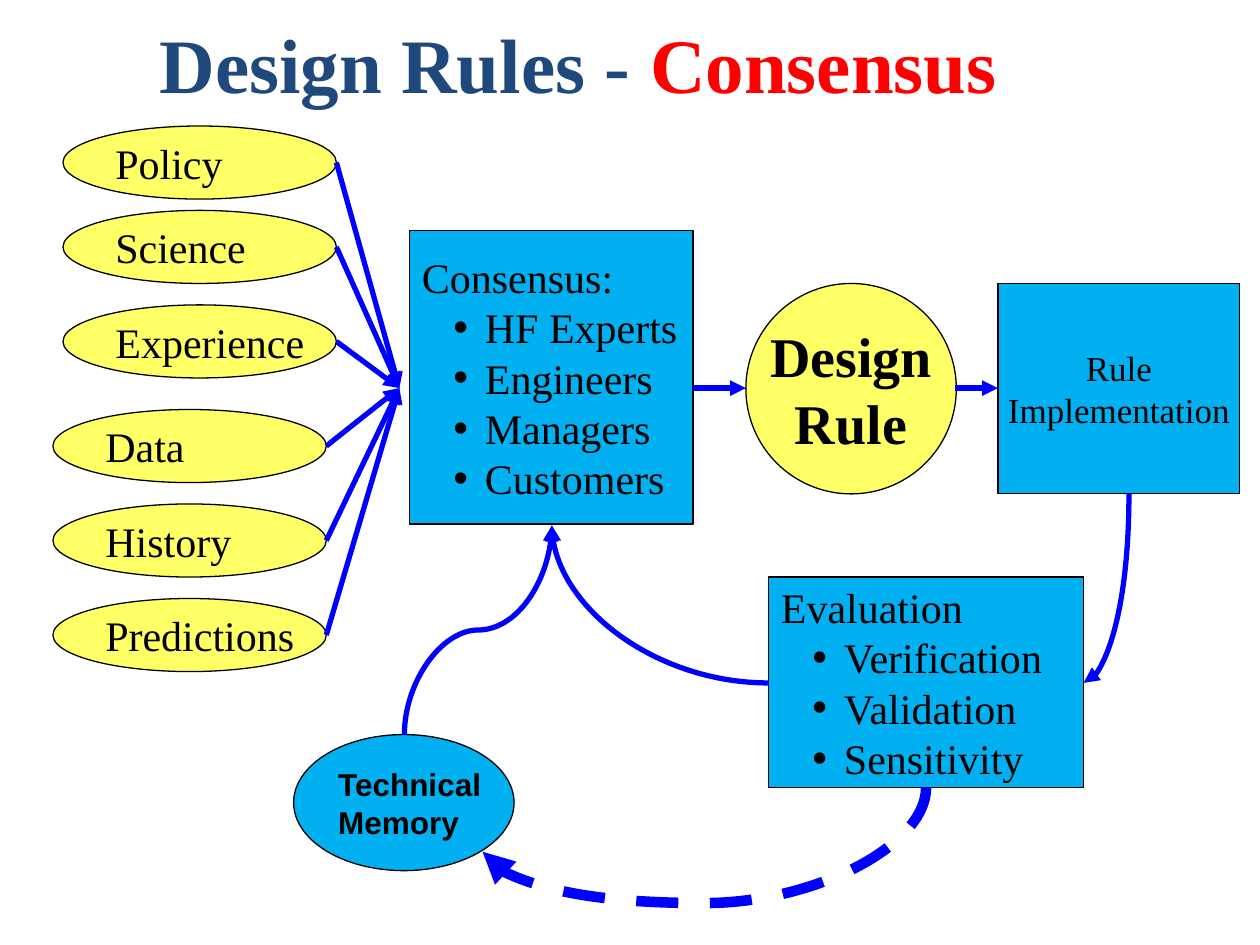
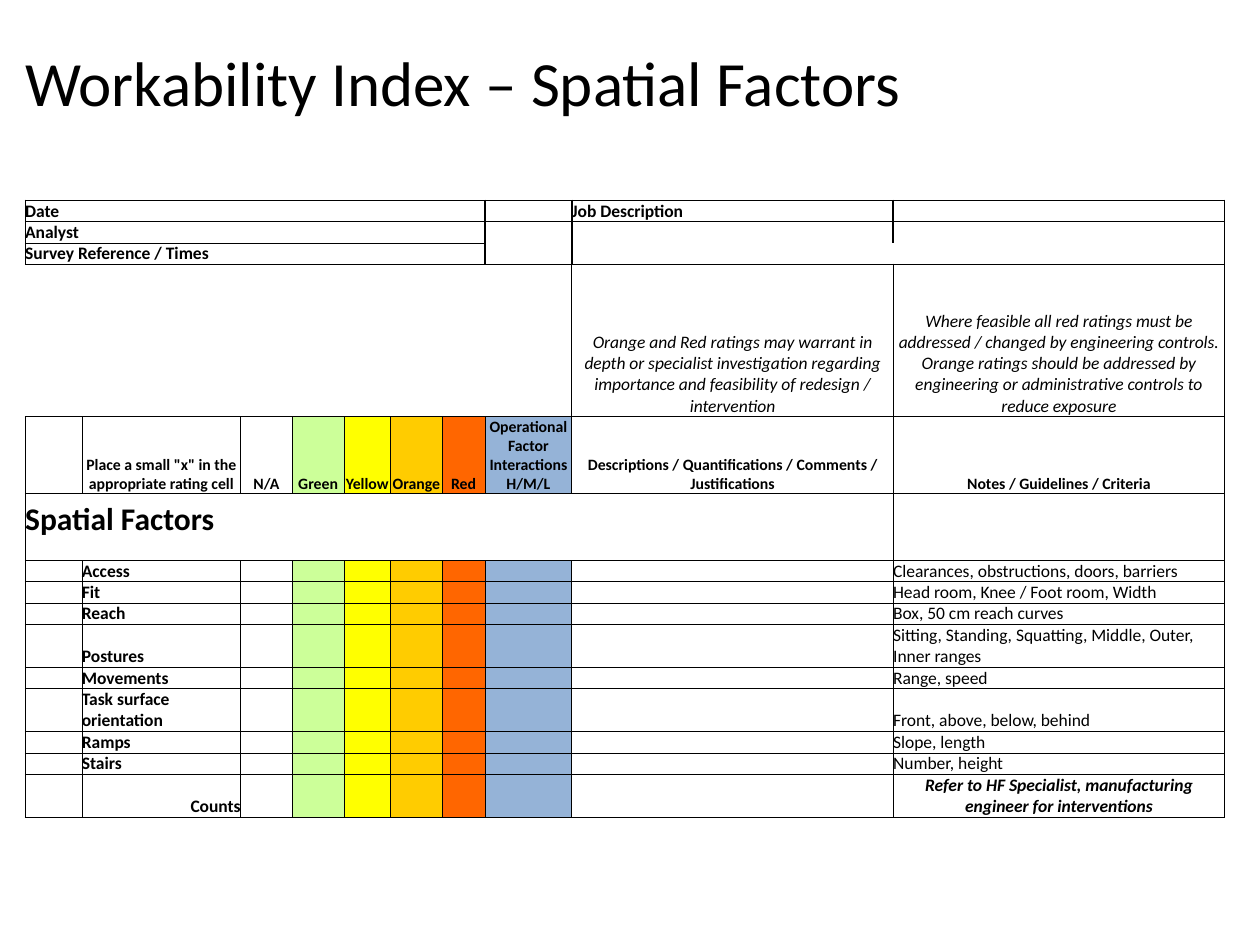
from lxml import etree
from pptx import Presentation
from pptx.dml.color import RGBColor
from pptx.enum.dml import MSO_LINE
from pptx.enum.shapes import MSO_CONNECTOR, MSO_SHAPE
from pptx.enum.text import MSO_ANCHOR, PP_ALIGN
from pptx.oxml.ns import qn
from pptx.util import Inches, Pt

OVAL, RECT = MSO_SHAPE.OVAL, MSO_SHAPE.RECTANGLE
LEFT, CENTER, RIGHT = PP_ALIGN.LEFT, PP_ALIGN.CENTER, PP_ALIGN.RIGHT
MIDDLE, BOTTOM = MSO_ANCHOR.MIDDLE, MSO_ANCHOR.BOTTOM
STRAIGHT, CURVE = MSO_CONNECTOR.STRAIGHT, MSO_CONNECTOR.CURVE
DASH = MSO_LINE.DASH

SERIF, SANS, TABLE_FONT = "Times New Roman", "Arial", "Calibri"
BLACK, NAVY, RED = "000000", "1F497D", "FF0000"
YELLOW, SKY, ARROW_BLUE = "FFFF66", "00B0F0", "0000FF"
NO_TABLE_STYLE = "{2D5ABB26-0587-4C30-8999-92F81FD0307C}"


def color(hex_value):
    return RGBColor.from_string(hex_value)


class SlideBuilder:
    """Holds the deck, the current page and the drawing style."""

    def __init__(self):
        self.deck = Presentation()
        self.deck.slide_width, self.deck.slide_height = Inches(10), Inches(7.5)
        self.page = None

    def new_page(self):
        self.page = self.deck.slides.add_slide(self.deck.slide_layouts[6])

    def add_span(self, para, text, size, font=SERIF, fill=BLACK, bold=False, italic=False):
        span = para.add_run()
        span.text = text
        span.font.size, span.font.name = Pt(size), font
        span.font.bold, span.font.italic = bold, italic
        span.font.color.rgb = color(fill)

    def title(self, left, top, width, height, spans):
        box = self.page.shapes.add_textbox(*map(Inches, (left, top, width, height)))
        frame = box.text_frame
        frame.word_wrap, frame.vertical_anchor = True, MIDDLE
        for text, fill in spans:
            self.add_span(frame.paragraphs[0], text, 44, fill=fill, bold=True)

    def node(self, kind, left, top, width, height, fill, lines, size=24,
             font=SERIF, bold=False, align=LEFT, bullets=()):
        shape = self.page.shapes.add_shape(
            kind, *map(Inches, (left, top, width, height)))
        shape.shadow.inherit = False
        shape.fill.solid()
        shape.fill.fore_color.rgb = color(fill)
        shape.line.color.rgb = color(BLACK)
        shape.line.width = Pt(0.75)
        frame = shape.text_frame
        frame.word_wrap, frame.vertical_anchor = False, MIDDLE
        for index, text in enumerate([*lines, *bullets]):
            para = frame.add_paragraph() if index else frame.paragraphs[0]
            para.alignment = align
            if index >= len(lines):
                self.add_bullet(para)
            self.add_span(para, text, size, font, bold=bold)

    def add_bullet(self, para):
        para.level = 1
        properties = para._p.get_or_add_pPr()
        properties.set("marL", str(Inches(0.5)))
        properties.set("indent", str(-Inches(0.25)))
        etree.SubElement(properties, qn("a:buFont"), typeface=SANS)
        etree.SubElement(properties, qn("a:buChar"), char="•")

    def arrow(self, start, end, kind=STRAIGHT, weight=3):
        link = self.page.shapes.add_connector(kind, *map(Inches, (*start, *end)))
        link.line.color.rgb = color(ARROW_BLUE)
        link.line.width = Pt(weight)
        etree.SubElement(link.line._get_or_add_ln(), qn("a:tailEnd"), type="triangle")
        etree.SubElement(link._element.spPr, qn("a:effectLst"))
        return link

    def curved_arrow(self, start, end, turn, preset, bend=None, weight=3):
        """Draw a curve whose unturned box runs top left to bottom right."""
        width, height = abs(end[0] - start[0]), abs(end[1] - start[1])
        if turn % 180:
            width, height = height, width
        mid_x, mid_y = (start[0] + end[0]) / 2, (start[1] + end[1]) / 2
        link = self.arrow((mid_x - width / 2, mid_y - height / 2),
                          (mid_x + width / 2, mid_y + height / 2), CURVE, weight)
        properties = link._element.spPr
        properties.find(qn("a:xfrm")).set("rot", str(turn * 60000))
        geometry = properties.find(qn("a:prstGeom"))
        geometry.set("prst", preset)
        if bend is not None:
            etree.SubElement(geometry.find(qn("a:avLst")), qn("a:gd"),
                             name="adj1", fmla=f"val {round(bend * 100000)}")
        return link

    def table(self, left, top, columns, rows):
        frame = self.page.shapes.add_table(
            len(rows), len(columns), *map(Inches, (left, top, sum(columns), sum(rows))))
        table = frame.table
        table.first_row = table.horz_banding = False
        table._tbl.tblPr.find(qn("a:tableStyleId")).text = NO_TABLE_STYLE
        for column, width in zip(table.columns, columns):
            column.width = Inches(width)
        for row, height in zip(table.rows, rows):
            row.height = Inches(height)
        return table

    def cell_border(self, cell, sides, weight):
        """Draw the given sides, in the order L, R, T, B."""
        for side in sides:
            line = etree.SubElement(cell._tc.get_or_add_tcPr(), qn(f"a:ln{side}"),
                                    w=str(Pt(weight)))
            fill = etree.SubElement(line, qn("a:solidFill"))
            etree.SubElement(fill, qn("a:srgbClr"), val=BLACK)

    def region(self, table, top, left, bottom, right, weight=0.5, sides="LRTB"):
        """Outline a block of cells, leaving its inside without lines."""
        for row in range(top, bottom + 1):
            for column in range(left, right + 1):
                edges = {"L": column == left, "R": column == right,
                         "T": row == top, "B": row == bottom}
                self.cell_border(table.cell(row, column),
                                 [side for side in sides if edges[side]], weight)

    def cell_style(self, cell, fill=None):
        cell.margin_left = cell.margin_right = cell.margin_top = cell.margin_bottom = 0
        cell.vertical_anchor = BOTTOM
        if fill:
            cell.fill.solid()
            cell.fill.fore_color.rgb = color(fill)
        else:
            cell.fill.background()
        etree.SubElement(cell.text_frame.paragraphs[0]._p, qn("a:endParaRPr"), sz="900")

    def cell_text(self, cell, text, size=10, bold=False, italic=False, align=LEFT, below=0):
        para = cell.text_frame.paragraphs[0]
        para.alignment = align
        cell.margin_bottom = Inches(below)
        self.add_span(para, text, size, TABLE_FONT, bold=bold, italic=italic)


def build_consensus(builder):
    builder.new_page()
    builder.title(1.17, 0.25, 8.5, 0.5, [("Design Rules - ", NAVY), ("Consensus", RED)])

    inputs = [("Policy", 0.5, 1), ("Science", 0.5, 1.67), ("Experience", 0.5, 2.42),
              ("Data", 0.42, 3.25), ("History", 0.42, 4), ("Predictions", 0.42, 4.75)]
    for name, left, top in inputs:
        builder.node(OVAL, left, top, 2.17, 0.58, YELLOW, [name])
        builder.arrow((left + 2.17, top + 0.29), (3.17, 3.08))

    builder.node(RECT, 3.25, 1.83, 2.25, 2.33, SKY, ["Consensus:"],
                 bullets=["HF Experts", "Engineers", "Managers", "Customers"])
    builder.node(OVAL, 5.92, 2.25, 1.67, 1.67, YELLOW, ["Design", "Rule"],
                 size=32, bold=True, align=CENTER)
    builder.node(RECT, 7.92, 2.25, 1.92, 1.67, SKY, ["Rule", "Implementation"],
                 size=20, align=CENTER)
    builder.node(RECT, 6.1, 4.58, 2.5, 1.67, SKY, ["Evaluation"],
                 bullets=["Verification", "Validation", "Sensitivity"])
    builder.node(OVAL, 2.33, 5.83, 1.75, 1.08, SKY, ["Technical", "Memory"],
                 size=18, font=SANS, bold=True)

    builder.arrow((5.5, 3.08), (5.92, 3.08))
    builder.arrow((7.58, 3.08), (7.92, 3.08))
    consensus_foot = (4.38, 4.17)
    builder.curved_arrow((8.96, 3.92), (8.6, 5.42), 90, "curvedConnector2")
    builder.curved_arrow((6.1, 5.42), consensus_foot, 180, "curvedConnector2")
    builder.curved_arrow((3.21, 5.83), consensus_foot, 270, "curvedConnector3", 0.5)
    feedback = builder.curved_arrow((7.35, 6.25), (3.83, 6.76), 90,
                                    "curvedConnector3", 1.8, weight=6)
    feedback.line.dash_style = DASH


RATING_FILLS = {3: "CCFF99", 4: "FFFF00", 5: "FFCC00", 6: "FF6600", 7: "95B3D7"}
HEADINGS = ['Place a small "x" in the appropriate rating cell', "N/A", "Green", "Yellow",
            "Orange", "Red", "Operational Factor Interactions H/M/L",
            "Descriptions / Quantifications / Comments / Justifications",
            "Notes / Guidelines / Criteria"]
ADVICE = [
    "Orange and Red ratings may warrant in depth or specialist investigation regarding "
    "importance and feasibility of redesign / intervention",
    "Where feasible all red ratings must be addressed / changed by engineering controls. "
    "Orange ratings should be addressed by engineering or administrative controls to "
    "reduce exposure"]
FACTORS = [
    ("Access", "Clearances, obstructions, doors, barriers"),
    ("Fit", "Head room, Knee / Foot room, Width"),
    ("Reach", "Box, 50 cm reach curves"),
    ("Postures", "Sitting, Standing, Squatting, Middle, Outer, Inner ranges"),
    ("Movements", "Range, speed"),
    ("Task surface orientation", "Front, above, below, behind"),
    ("Ramps", "Slope, length"),
    ("Stairs", "Number, height"),
    ("Counts", "Refer to HF Specialist, manufacturing engineer for interventions")]
HEADING_ROW, SECTION_ROW, FIRST_FACTOR_ROW = 5, 6, 7


def build_workability(builder):
    builder.new_page()
    columns = [0.45, 1.26, 0.41, 0.41, 0.37, 0.41, 0.34, 0.69, 2.55, 2.63]
    one_line, two_lines = 0.17, 0.34
    rows = [1.23, *[one_line] * 3, 1.21, 0.61, 0.53, *[one_line] * 3, two_lines,
            one_line, two_lines, *[one_line] * 2, two_lines]
    table = builder.table(0.2, 0.36, columns, rows)

    builder.region(table, 0, 0, 0, 9, 1, "B")
    for row in range(1, 4):
        builder.region(table, row, 0, row, 6)
    builder.region(table, 1, 7, 3, 7, 1)
    builder.region(table, 1, 8, 3, 9, 1)
    builder.region(table, 4, 0, 4, 7, sides="RTB")
    builder.region(table, SECTION_ROW, 0, SECTION_ROW, 8)
    single_cells = [(4, 8), (4, 9), (SECTION_ROW, 9)]
    single_cells += [(row, column) for row in (HEADING_ROW, *range(FIRST_FACTOR_ROW, len(rows)))
                     for column in range(len(columns))]
    for row, column in single_cells:
        builder.region(table, row, column, row, column)

    for row in range(len(rows)):
        rated = row == HEADING_ROW or row >= FIRST_FACTOR_ROW
        for column in range(len(columns)):
            builder.cell_style(table.cell(row, column),
                               RATING_FILLS.get(column) if rated else None)
    for row, last in ((0, 9), (3, 1), (SECTION_ROW, 8)):
        table.cell(row, 0).merge(table.cell(row, last))

    builder.cell_text(table.cell(0, 0), "Workability Index – Spatial Factors", 36, below=0.61)
    for row, label in enumerate(["Date", "Analyst", "Survey Reference / Times"], 1):
        builder.cell_text(table.cell(row, 0), label, bold=True)
    builder.cell_text(table.cell(1, 8), "Job Description", bold=True)
    for column, text in enumerate(ADVICE, 8):
        builder.cell_text(table.cell(4, column), text, italic=True, align=CENTER)
    for column, text in enumerate(HEADINGS, 1):
        builder.cell_text(table.cell(HEADING_ROW, column), text, 9, bold=True, align=CENTER)
    builder.cell_text(table.cell(SECTION_ROW, 0), "Spatial Factors", 18, bold=True, below=0.17)
    for row, (factor, note) in enumerate(FACTORS, FIRST_FACTOR_ROW):
        total = factor == "Counts"
        builder.cell_text(table.cell(row, 1), factor, bold=True,
                          align=RIGHT if total else LEFT)
        builder.cell_text(table.cell(row, 9), note, bold=total, italic=total,
                          align=CENTER if total else LEFT)


def main():
    builder = SlideBuilder()
    build_consensus(builder)
    build_workability(builder)
    builder.deck.save("out.pptx")


if __name__ == "__main__":
    main()
